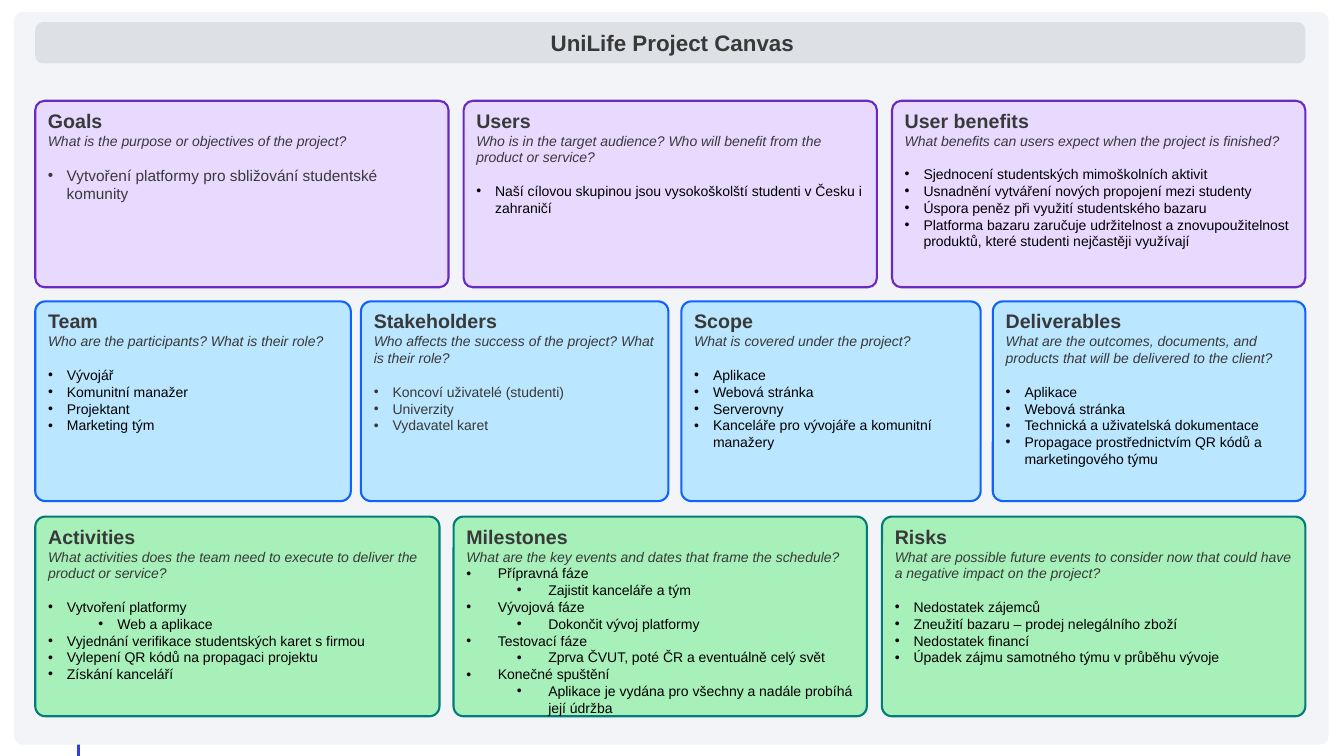
from dataclasses import dataclass

import pptx
import pptx.dml.color
import pptx.enum.shapes
import pptx.enum.text
import pptx.oxml
import pptx.oxml.ns
import pptx.util
from lxml import etree

Pt = pptx.util.Pt
RGBColor = pptx.dml.color.RGBColor
qn = pptx.oxml.ns.qn

FONT = "Arial"
BLACK = RGBColor(0x00, 0x00, 0x00)
INK = RGBColor(0x39, 0x39, 0x39)
PANEL = RGBColor(0xF2, 0xF4, 0xF8)
BAR = RGBColor(0xDD, 0xE1, 0xE6)
RULE = RGBColor(0x2F, 0x3F, 0xE0)
LILAC = RGBColor(0xE8, 0xDA, 0xFF)
PURPLE = RGBColor(0x69, 0x29, 0xC4)
SKY = RGBColor(0xBA, 0xE6, 0xFF)
BLUE = RGBColor(0x0F, 0x62, 0xFE)
MINT = RGBColor(0xA7, 0xF0, 0xBA)
TEAL = RGBColor(0x00, 0x7D, 0x79)

LEVEL_STEP = 36


@dataclass
class Section:
    left: float
    width: float
    heading: str
    question: str
    items: list
    color: RGBColor = BLACK
    size: float = 10
    hang: float = 13.5
    gap: float = 12


PURPOSE = [
    Section(25.2, 295.2, "Goals", "What is the purpose or objectives of the project?",
            [(0, "Vytvoření platformy pro sbližování studentské komunity")],
            color=INK, size=11),
    Section(331.2, 295.2, "Users",
            "Who is in the target audience? Who will benefit from the product or service?",
            [(0, "Naší cílovou skupinou jsou vysokoškolští studenti v Česku i zahraničí")]),
    Section(637.2, 295.2, "User benefits",
            "What benefits can users expect when the project is finished?",
            [(0, "Sjednocení studentských mimoškolních aktivit"),
             (0, "Usnadnění vytváření nových propojení mezi studenty"),
             (0, "Úspora peněz při využití studentského bazaru"),
             (0, "Platforma bazaru zaručuje udržitelnost a znovupoužitelnost produktů, "
                 "které studenti nejčastěji využívají")]),
]

PEOPLE = [
    Section(25.2, 225.4, "Team", "Who are the participants? What is their role?",
            [(0, "Vývojář"), (0, "Komunitní manažer"), (0, "Projektant"),
             (0, "Marketing tým")]),
    Section(257.8, 219.6, "Stakeholders",
            "Who affects the success of the project? What is their role?",
            [(0, "Koncoví uživatelé (studenti)"), (0, "Univerzity"),
             (0, "Vydavatel karet")],
            color=INK),
    Section(486.7, 213.8, "Scope", "What is covered under the project?",
            [(0, "Aplikace"), (0, "Webová stránka"), (0, "Serverovny"),
             (0, "Kanceláře pro vývojáře a komunitní manažery")]),
    Section(709.2, 223.2, "Deliverables",
            "What are the outcomes, documents, and products that will be delivered "
            "to the client?",
            [(0, "Aplikace"), (0, "Webová stránka"),
             (0, "Technická a uživatelská dokumentace"),
             (0, "Propagace prostřednictvím QR kódů a marketingového týmu")]),
]

DELIVERY = [
    Section(25.2, 288.7, "Activities",
            "What activities does the team need to execute to deliver the product "
            "or service?",
            [(0, "Vytvoření platformy"), (1, "Web a aplikace"),
             (0, "Vyjednání verifikace studentských karet s firmou"),
             (0, "Vylepení QR kódů na propagaci projektu"),
             (0, "Získání kanceláří")]),
    Section(324, 295.2, "Milestones",
            "What are the key events and dates that frame the schedule?",
            [(0, "Přípravná fáze"), (1, "Zajistit kanceláře a tým"),
             (0, "Vývojová fáze"), (1, "Dokončit vývoj platformy"),
             (0, "Testovací fáze"), (1, "Zprva ČVUT, poté ČR a eventuálně celý svět"),
             (0, "Konečné spuštění"),
             (1, "Aplikace je vydána pro všechny a nadále probíhá její údržba")],
            hang=22.5, gap=0),
    Section(630, 302.4, "Risks",
            "What are possible future events to consider now that could have "
            "a negative impact on the project?",
            [(0, "Nedostatek zájemců"),
             (0, "Zneužití bazaru – prodej nelegálního zboží"),
             (0, "Nedostatek financí"),
             (0, "Úpadek zájmu samotného týmu v průběhu vývoje")]),
]


def add_run(p, text, size, color=INK, bold=False, italic=False):
    r = p.add_run()
    r.text = text
    r.font.name = FONT
    r.font.size = Pt(size)
    r.font.color.rgb = color
    r.font.bold = bold
    r.font.italic = italic


def set_bullet(p, level, hang):
    p.level = level
    pPr = p._p.get_or_add_pPr()
    pPr.set("marL", str(Pt(hang + level * LEVEL_STEP)))
    pPr.set("indent", str(-Pt(hang)))
    etree.SubElement(pPr, qn("a:buFont")).set("typeface", FONT)
    etree.SubElement(pPr, qn("a:buChar")).set("char", "•")


def add_round_box(s, left, top, width, height, radius, fill, line=None):
    sp = s.shapes.add_shape(pptx.enum.shapes.MSO_SHAPE.ROUNDED_RECTANGLE,
                            Pt(left), Pt(top), Pt(width), Pt(height))
    sp.adjustments[0] = radius
    sp.shadow.inherit = False
    sp.fill.solid()
    sp.fill.fore_color.rgb = fill
    if line is None:
        sp.line.fill.background()
    else:
        sp.line.color.rgb = line
        sp.line.width = Pt(1.5)
    return sp


def add_backdrop(s, left, top, width, height):
    x = left + 46
    rule = s.shapes.add_connector(pptx.enum.shapes.MSO_CONNECTOR.STRAIGHT,
                                  Pt(x), Pt(top + 79), Pt(x), Pt(top + height + 8))
    rule.line.color.rgb = RULE
    rule.line.width = Pt(2)
    etree.SubElement(rule._element.spPr, qn("a:effectLst"))
    add_round_box(s, left, top, width, height, 0.012, PANEL)


def add_title(s, left, top, width, height):
    add_round_box(s, left, top, width, height, 0.188, BAR)
    title = s.shapes.title
    title.element.getparent().append(title.element)
    title.left, title.top = Pt(left + 235), Pt(top + 1)
    title.width, title.height = Pt(width - 467), Pt(height - 3)
    tf = title.text_frame
    tf.word_wrap = True
    tf.auto_size = pptx.enum.text.MSO_AUTO_SIZE.NONE
    tf.vertical_anchor = pptx.enum.text.MSO_ANCHOR.MIDDLE
    p = tf.paragraphs[0]
    p.alignment = pptx.enum.text.PP_ALIGN.CENTER
    add_run(p, "UniLife Project Canvas", 16, bold=True)


def add_section(s, section, top, height, fill, line):
    sp = add_round_box(s, section.left, top, section.width, height, 0.05, fill, line)
    tf = sp.text_frame
    tf.word_wrap = True
    tf.vertical_anchor = pptx.enum.text.MSO_ANCHOR.TOP
    add_run(tf.paragraphs[0], section.heading, 14, bold=True)
    add_run(tf.add_paragraph(), section.question, 10, italic=True)
    for i, (level, text) in enumerate(section.items):
        p = tf.add_paragraph()
        set_bullet(p, level, section.hang)
        if i == 0 and section.gap:
            p.space_before = Pt(section.gap)
        add_run(p, text, section.size, section.color)
    for p in tf.paragraphs:
        p.alignment = pptx.enum.text.PP_ALIGN.LEFT


def add_row(s, sections, top, height, fill, line):
    for section in sections:
        add_section(s, section, top, height, fill, line)


def main():
    prs = pptx.Presentation()
    prs.slide_width, prs.slide_height = Pt(960), Pt(540)
    s = prs.slides.add_slide(prs.slide_layouts[5])
    add_backdrop(s, 10, 8.6, 939, 523.4)
    add_title(s, 25.2, 15.8, 907.2, 29.5)
    add_row(s, PURPOSE, 72, 133.2, LILAC, PURPLE)
    add_row(s, PEOPLE, 215.3, 142.6, SKY, BLUE)
    add_row(s, DELIVERY, 369, 142.6, MINT, TEAL)
    prs.save("out.pptx")


if __name__ == "__main__":
    main()
